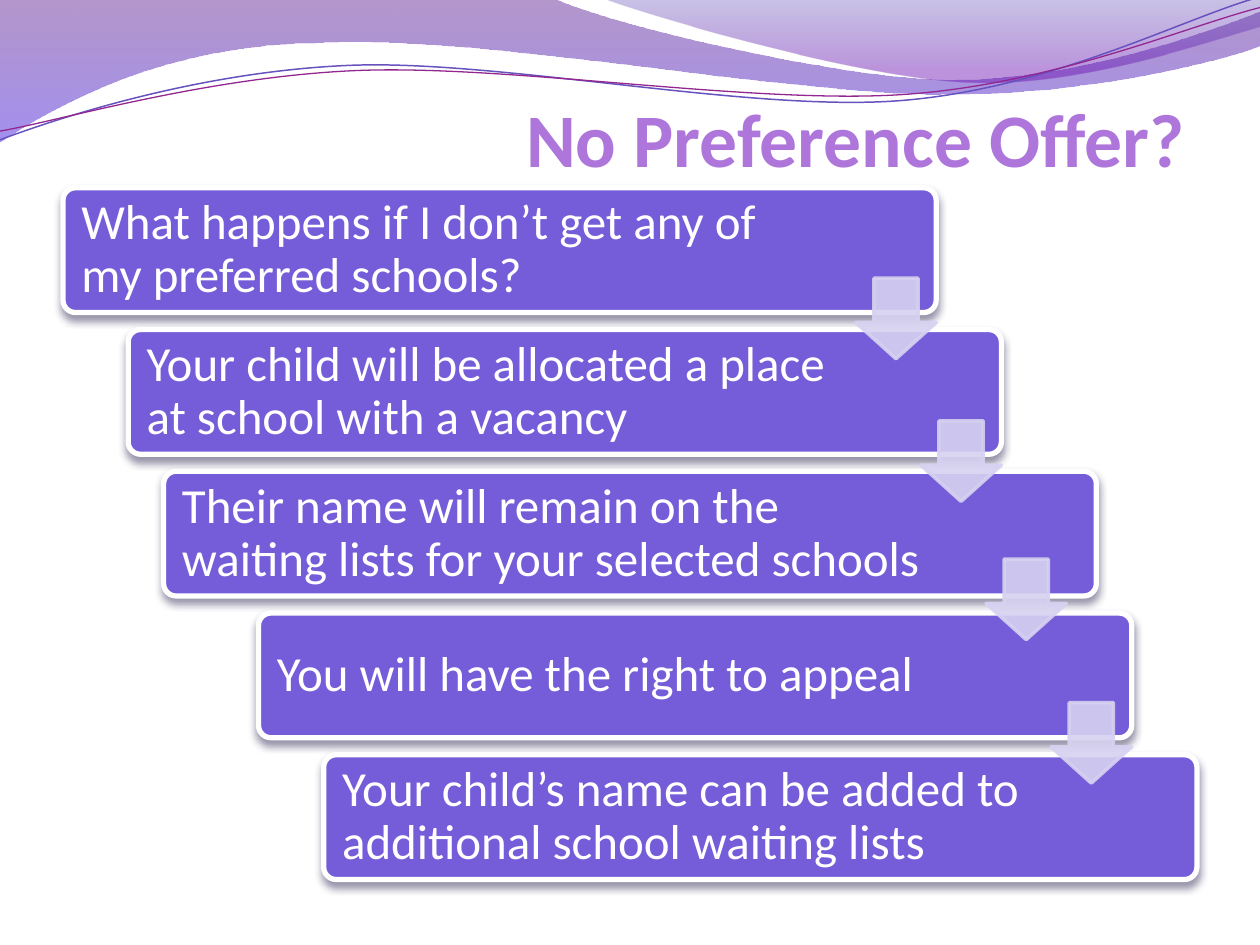
"""Build the "No Preference Offer?" slide with its cascade of steps."""
from lxml.etree import SubElement
from pptx import Presentation
from pptx.dml.color import RGBColor
from pptx.enum.shapes import MSO_SHAPE as Preset
from pptx.enum.text import MSO_ANCHOR as Anchor, PP_ALIGN as Align
from pptx.oxml.ns import qn
from pptx.util import Pt

FONT = "Calibri"
COLOURS = {
    "title": "AE76DB", "card": "755DD9", "white": "FFFFFF", "shadow": "28204D",
    "arrow": "D6D2F1", "plum": "58188D", "blue": "5735E4", "indigo": "4E37AE",
    "violet": "6A11B3", "line_blue": "6752BF", "line_plum": "92278F",
}
WAVES = [
    ([(0, -0.7), (316.8, -0.7), (342.7, 12.2, 478.1, 45.4, 545.8, 45.4),
      (614.2, 45.4, 689.8, 18.7, 720, 6.5), (720.7, 25.9),
      (707.8, 31.7, 626.4, 54.7, 537.1, 54), (447.8, 54, 275, 20.2, 185, 24.5),
      (92.9, 25.2, 33.1, 59.8, -0.7, 81.4)],
     [(0, "plum", 45), (1, "blue", 55)]),
    ([(344.9, -0.7), (366.5, 7.9, 491, 44.6, 553.7, 46.8),
      (616.3, 49.7, 691.9, 23, 720, 15.1), (720, 0)],
     [(0, "indigo", 30), (0.8, "violet", 45)]),
]
STRANDS = [
    ([(0, 79.9), (34.6, 67, 113.8, 41, 199.4, 37.4),
      (284.4, 33.8, 427, 64.1, 513.4, 57.6),
      (599.8, 51.1, 675.4, 10.8, 718.6, -1.4)], "line_blue", 0.85),
    ([(0, 74.9), (33.8, 69.1, 118.1, 43.9, 203.8, 40.3),
      (290.2, 36.7, 429.8, 59.8, 516.2, 54),
      (601.9, 48.2, 677.5, 15.1, 720, 4.3)], "line_plum", 0.75),
]
STEPS = [
    (36, 499, 414, "What happens if I don’t get any of my preferred schools?"),
    (73.25, 499, 411, "Your child will be allocated a place at school with a vacancy"),
    (93.5, 533, 440, "Their name will remain on the waiting lists for your selected schools"),
    (147.75, 499, 411, "You will have the right to appeal"),
    (185, 499, 411, "Your child’s name can be added to additional school waiting lists"),
]
CARD_TOP, CARD_HEIGHT, CARD_STEP, TEXT_GAP = 107.3, 71.3, 81, 2.1
ARROW_LEFT, ARROW_STEP, ARROW_SIZE = 489, 37.2, 46
ARROW_TOPS = (159, 240.5, 319.5, 401.5)


def rgb(name):
    """Return the named colour."""
    return RGBColor.from_string(COLOURS[name])


def set_alpha(element, percent):
    """Give every colour inside an element an opacity."""
    for colour in element.iter(qn("a:srgbClr")):
        SubElement(colour, qn("a:alpha"), val=str(percent * 1000))


def add_outline(page, outline, close):
    """Add a freeform of lines (two numbers) and cubic curves (six numbers)."""
    start, *segments = outline
    builder = page.shapes.build_freeform(*map(Pt, start))
    builder.add_line_segments(
        [(Pt(segment[at]), Pt(segment[at + 1]))
         for segment in segments for at in range(0, len(segment), 2)], close=close)
    shape = builder.convert_to_shape()
    shape.shadow.inherit = False
    steps = iter(list(shape._element.iter(qn("a:lnTo"))))
    for segment in segments:
        curve = next(steps)
        if len(segment) == 6:
            curve.tag = qn("a:cubicBezTo")
            for follower in (next(steps), next(steps)):
                curve.append(follower[0])
                follower.getparent().remove(follower)
    return shape


def add_wave(page, outline, stops):
    """Add a wave filled from top to bottom with a translucent gradient."""
    wave = add_outline(page, outline, True)
    wave.line.fill.background()
    wave.fill.gradient()
    wave.fill.gradient_angle = 270
    for stop, (position, colour, opacity) in zip(wave.fill.gradient_stops, stops):
        stop.position = position
        stop.color.rgb = rgb(colour)
        set_alpha(stop.color._xFill, opacity)


def add_strand(page, outline, colour, width):
    """Add a thin curved line."""
    strand = add_outline(page, outline, False)
    strand.fill.background()
    strand.line.color.rgb = rgb(colour)
    strand.line.width = Pt(width)


def add_shape(page, preset, place, adjustments, fill, line, width):
    """Add a preset shape with a plain fill and outline."""
    shape = page.shapes.add_shape(preset, *map(Pt, place))
    shape.shadow.inherit = False
    for index, value in enumerate(adjustments):
        shape.adjustments[index] = value
    shape.fill.solid()
    shape.fill.fore_color.rgb = rgb(fill)
    shape.line.color.rgb = rgb(line)
    shape.line.width = Pt(width)
    return shape


def add_text(page, place, text, size, colour, anchor, margins):
    """Add a wrapping text box and return its paragraph."""
    box = page.shapes.add_textbox(*map(Pt, place))
    frame = box.text_frame
    frame.word_wrap = True
    frame.vertical_anchor = anchor
    frame.margin_left = frame.margin_right = Pt(margins[0])
    frame.margin_top = frame.margin_bottom = Pt(margins[1])
    para = frame.paragraphs[0]
    span = para.add_run()
    span.text = text
    span.font.name = FONT
    span.font.size = Pt(size)
    span.font.color.rgb = rgb(colour)
    return para


def add_title(page, text):
    """Add the right-aligned title."""
    para = add_text(page, (36, 49, 648, 58.3), text, 43.2, "title", Anchor.BOTTOM, (7.2, 3))
    para.alignment = Align.RIGHT
    para.runs[0].font.bold = True


def add_card(page, left, top, width, text_width, text):
    """Add a rounded step card with a soft shadow and its text."""
    card = add_shape(page, Preset.ROUNDED_RECTANGLE, (left, top, width, CARD_HEIGHT),
                     [0.1], "card", "white", 3)
    effects = card._element.spPr.find(qn("a:effectLst"))
    shadow = SubElement(effects, qn("a:outerShdw"), blurRad=str(Pt(4.5)), dist=str(Pt(3)),
                        dir="5400000", rotWithShape="0")
    SubElement(shadow, qn("a:srgbClr"), val=COLOURS["shadow"])
    set_alpha(shadow, 48)
    place = (left + TEXT_GAP, top + TEXT_GAP, text_width, CARD_HEIGHT - 2 * TEXT_GAP)
    para = add_text(page, place, text, 28, "white", Anchor.MIDDLE, (8.4, 0))
    para.alignment = Align.LEFT
    para.line_spacing = 0.9


def add_arrow(page, left, top):
    """Add a translucent arrow that leads to the next card."""
    arrow = add_shape(page, Preset.DOWN_ARROW, (left, top, ARROW_SIZE, ARROW_SIZE),
                      [0.55, 0.45], "arrow", "arrow", 2)
    set_alpha(arrow._element.spPr, 90)


def main():
    """Assemble and save the deck."""
    deck = Presentation()
    deck.slide_width, deck.slide_height = Pt(720), Pt(540)
    page = deck.slides.add_slide(deck.slide_layouts[6])
    for wave in WAVES:
        add_wave(page, *wave)
    for strand in STRANDS:
        add_strand(page, *strand)
    add_title(page, "No Preference Offer?")
    for index, (left, width, text_width, text) in enumerate(STEPS):
        add_card(page, left, CARD_TOP + index * CARD_STEP, width, text_width, text)
    for index, top in enumerate(ARROW_TOPS):
        add_arrow(page, ARROW_LEFT + index * ARROW_STEP, top)
    deck.save("out.pptx")


if __name__ == "__main__":
    main()
